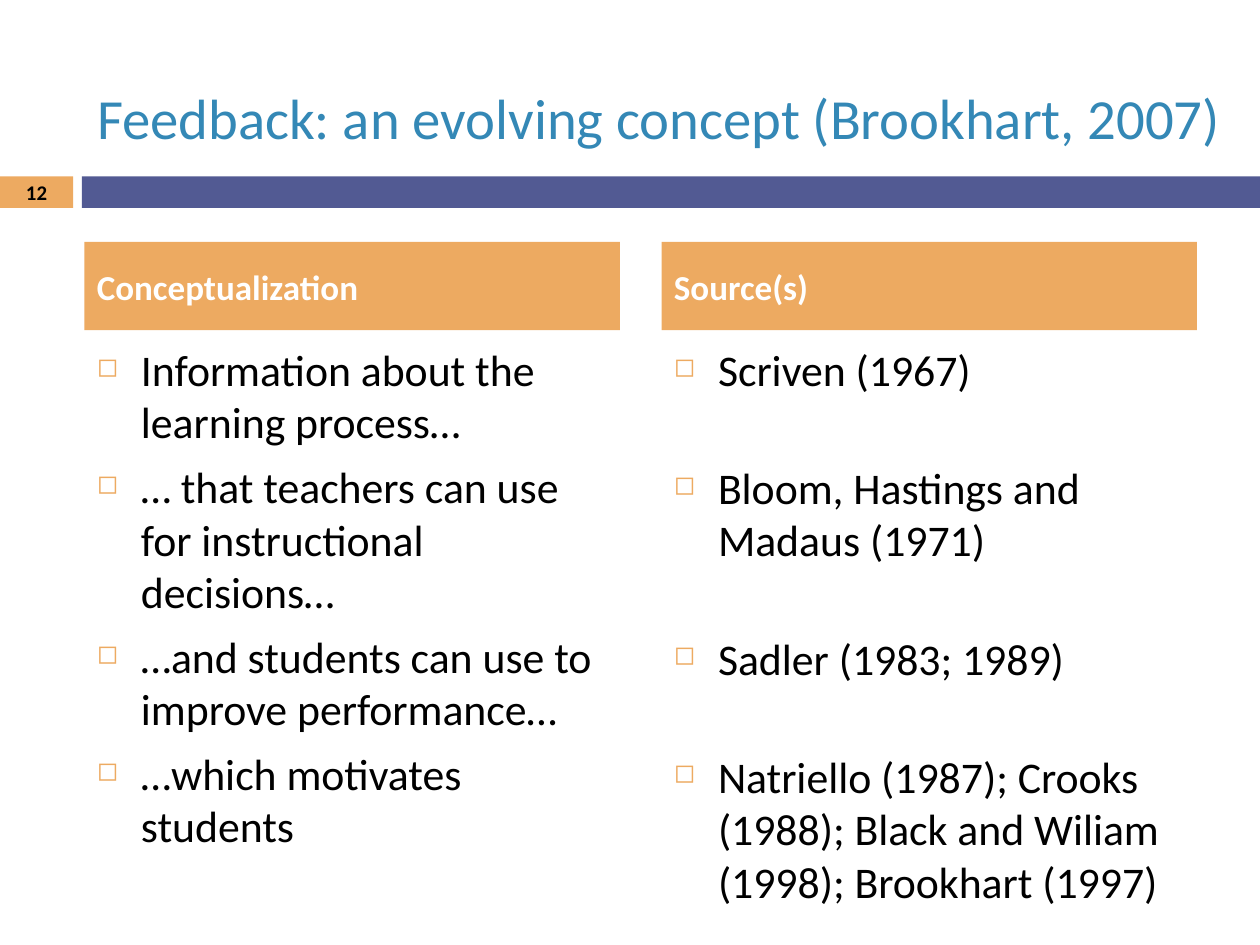
from lxml import etree
from pptx import Presentation
from pptx.dml.color import RGBColor
from pptx.enum.shapes import MSO_SHAPE
from pptx.enum.text import MSO_ANCHOR, MSO_AUTO_SIZE, PP_ALIGN
from pptx.oxml.ns import qn
from pptx.util import Inches, Pt

RECTANGLE = MSO_SHAPE.RECTANGLE
TOP, MIDDLE = MSO_ANCHOR.TOP, MSO_ANCHOR.MIDDLE
LEFT, CENTER = PP_ALIGN.LEFT, PP_ALIGN.CENTER
NO_AUTOFIT = MSO_AUTO_SIZE.NONE
TITLE_ONLY = 5

ORANGE, INDIGO, BLUE = "EDAA61", "525A93", "3488B6"
BLACK, WHITE = "000000", "FFFFFF"

WIDTH, HEIGHT = 10, 7.5
MARGIN, COLUMN_WIDTH, COLUMN_STEP = 0.67, 4.25, 4.58
HEADER_TOP, HEADER_HEIGHT, LIST_TOP = 1.92, 0.7, 2.67
BAND_TOP, BAND_HEIGHT, NUMBER_WIDTH, BAND_LEFT = 1.4, 0.25, 0.58, 0.65
SPACE_BEFORE, INDENT, BULLET_SCALE = 7, 0.35, 60
BLANK_LINE = 30.5

# Heading, list height, space after each item but the last, items
COLUMNS = [
    ("Conceptualization", 4.5, 0, [
        "Information about the learning process…",
        "… that teachers can use for instructional decisions…",
        "…and students can use to improve performance…",
        "…which motivates students",
    ]),
    ("Source(s)", 3.92, BLANK_LINE, [
        "Scriven (1967)",
        "Bloom, Hastings and Madaus (1971)",
        "Sadler (1983; 1989)",
        "Natriello (1987); Crooks (1988); Black and Wiliam (1998); Brookhart (1997)",
    ]),
]


def color(value):
    return RGBColor.from_string(value)


def set_attributes(target, values):
    for name, value in values.items():
        setattr(target, name, value)


def box(left, top, width, height):
    return [Inches(length) for length in (left, top, width, height)]


def format_frame(frame, anchor):
    set_attributes(frame, {"word_wrap": True, "auto_size": NO_AUTOFIT,
                           "vertical_anchor": anchor})


def write(paragraph, text, size, text_color, bold=False, **layout):
    run = paragraph.add_run()
    run.text = text
    set_attributes(run.font, {"name": "Calibri", "size": Pt(size), "bold": bold})
    run.font.color.rgb = color(text_color)
    set_attributes(paragraph, {"alignment": LEFT, **layout})


def add_bullet(paragraph):
    properties = paragraph._p.get_or_add_pPr()
    properties.set("marL", str(Inches(INDENT)))
    properties.set("indent", str(-Inches(INDENT)))
    bullet_color = etree.SubElement(properties, qn("a:buClr"))
    etree.SubElement(bullet_color, qn("a:srgbClr"), val=ORANGE)
    etree.SubElement(properties, qn("a:buSzPct"), val=str(BULLET_SCALE * 1000))
    etree.SubElement(properties, qn("a:buChar"), char="◻")


def add_bar(slide, position, fill):
    bar = slide.shapes.add_shape(RECTANGLE, *box(*position))
    bar.shadow.inherit = False
    bar.fill.solid()
    bar.fill.fore_color.rgb = color(fill)
    bar.line.fill.background()
    format_frame(bar.text_frame, MIDDLE)
    return bar


def add_title(slide, text):
    title = slide.shapes.title
    left, top, width, height = box(MARGIN, 0.3, WIDTH - MARGIN, 1.25)
    set_attributes(title, {"left": left, "top": top, "width": width, "height": height})
    format_frame(title.text_frame, MIDDLE)
    write(title.text_frame.paragraphs[0], text, 32.4, BLUE)


def add_band(slide, number):
    """Add the slide number block and the long bar beside it."""
    block = add_bar(slide, (0, BAND_TOP, NUMBER_WIDTH, BAND_HEIGHT), ORANGE)
    set_attributes(block.text_frame, {"margin_top": 0, "margin_bottom": 0})
    write(block.text_frame.paragraphs[0], number, 11.9, BLACK, True, alignment=CENTER)
    add_bar(slide, (BAND_LEFT, BAND_TOP, WIDTH - BAND_LEFT, BAND_HEIGHT), INDIGO)


def add_header(slide, left, text):
    header = add_bar(slide, (left, HEADER_TOP, COLUMN_WIDTH, HEADER_HEIGHT), ORANGE)
    write(header.text_frame.paragraphs[0], text, 20, WHITE, True,
          space_before=Pt(SPACE_BEFORE))


def add_list(slide, left, height, gap, items):
    frame = slide.shapes.add_textbox(*box(left, LIST_TOP, COLUMN_WIDTH, height)).text_frame
    format_frame(frame, TOP)
    for index, item in enumerate(items):
        paragraph = frame.add_paragraph() if index else frame.paragraphs[0]
        space_after = gap if index < len(items) - 1 else 0
        write(paragraph, item, 25, BLACK,
              space_before=Pt(SPACE_BEFORE), space_after=Pt(space_after))
        add_bullet(paragraph)


def main():
    presentation = Presentation()
    set_attributes(presentation, {"slide_width": Inches(WIDTH),
                                  "slide_height": Inches(HEIGHT)})
    slide = presentation.slides.add_slide(presentation.slide_layouts[TITLE_ONLY])
    add_title(slide, "Feedback: an evolving concept (Brookhart, 2007)")
    add_band(slide, "12")
    for column, (heading, height, gap, items) in enumerate(COLUMNS):
        left = MARGIN + column * COLUMN_STEP
        add_header(slide, left, heading)
        add_list(slide, left, height, gap, items)
    presentation.save("out.pptx")


if __name__ == "__main__":
    main()
